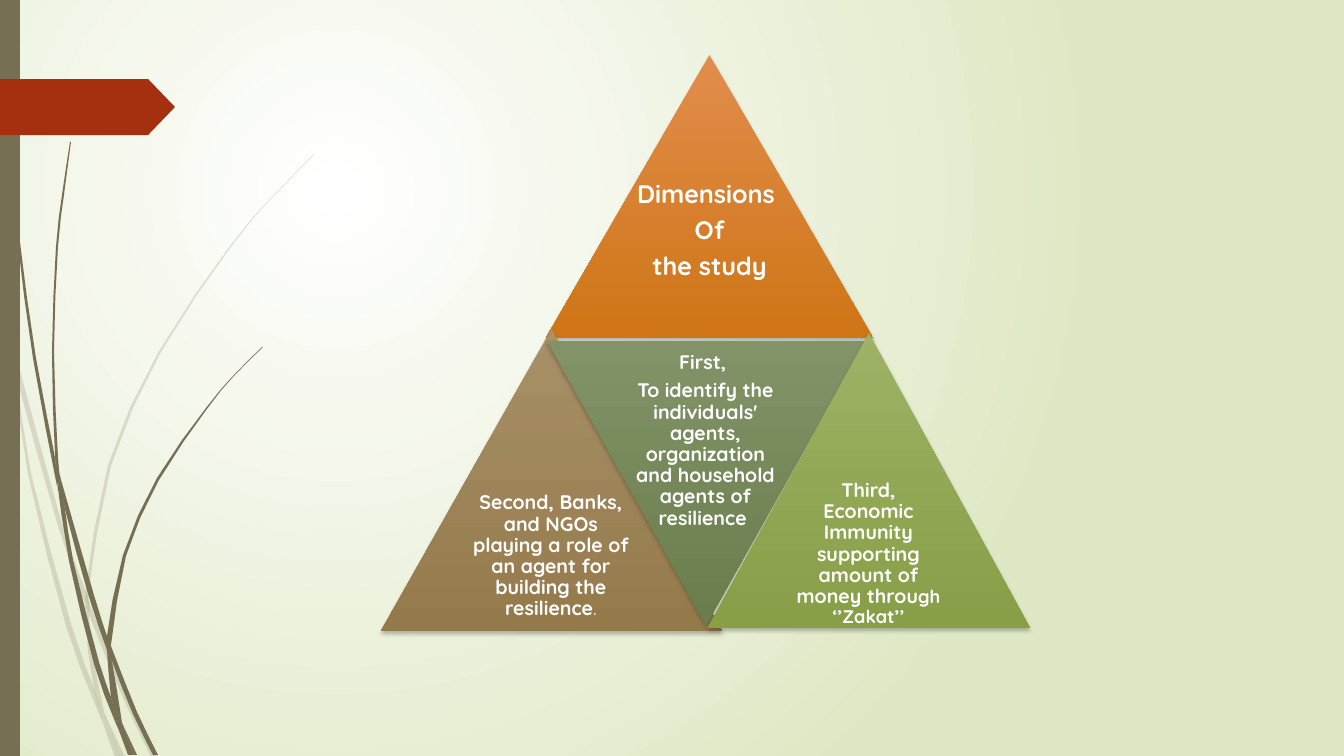
from dataclasses import dataclass
from typing import NamedTuple

from lxml import etree
from pptx import Presentation
from pptx.dml.color import RGBColor
from pptx.enum.shapes import MSO_SHAPE
from pptx.enum.text import MSO_ANCHOR, MSO_AUTO_SIZE, PP_ALIGN
from pptx.oxml.ns import qn
from pptx.util import Pt

PX = 914400 / 100.8
FONT = "Quicksand"
OLIVE = "766F54"
CURVE_STEPS = 2


class Box(NamedTuple):
    x: int
    y: int
    w: int
    h: int


class Run(NamedTuple):
    text: str
    size: int = 14
    bold: bool = True


class Blade(NamedTuple):
    """A piece of grass between two smooth edges, each listed from tip to root."""
    left: list[tuple[int, int]]
    right: list[tuple[int, int]]


@dataclass
class Panel:
    triangle: Box
    top_color: str
    bottom_color: str
    text_box: Box
    paragraphs: list[list[Run]]
    rotation: int = 0
    is_title: bool = False
    inset: int = 6
    space_after: float = 5


PALE_BLADES = [
    Blade([(0, 301), (10, 347), (11, 353)], [(0, 284), (9, 325), (11, 353)]),
    Blade([(14, 348), (17, 379), (58, 526), (85, 604)], [(14, 348), (62, 524), (86, 591)]),
    Blade([(89, 601), (89, 615), (124, 700), (151, 757)],
          [(89, 601), (93, 612), (128, 698), (156, 757)]),
    Blade([(106, 717), (120, 757)], [(106, 717), (125, 757)]),
    Blade([(11, 353), (28, 474), (66, 626), (93, 699), (102, 720)],
          [(11, 353), (17, 379), (31, 473), (71, 624), (94, 688), (100, 713), (102, 720)]),
    Blade([(85, 604), (88, 651), (94, 688), (97, 698), (106, 717)],
          [(85, 604), (89, 615), (92, 651), (104, 712), (106, 717)]),
    Blade([(314, 154), (270, 199), (230, 246), (159, 351), (108, 465), (86, 589), (89, 601)],
          [(314, 155), (270, 200), (231, 247), (161, 352), (111, 466), (89, 589), (89, 601)]),
    Blade([(102, 720), (115, 757)], [(102, 720), (120, 757)]),
    Blade([(86, 591), (85, 604), (89, 613)], [(86, 591), (89, 601), (89, 615)]),
    Blade([(94, 688), (100, 713), (102, 720), (120, 757)],
          [(94, 688), (97, 698), (106, 717), (120, 757)]),
]
DARK_BLADES = [
    Blade([(3, 0), (7, 111), (17, 235), (33, 358), (56, 481), (57, 485)],
          [(4, 0), (8, 110), (19, 234), (36, 358), (55, 457), (57, 485)]),
    Blade([(60, 476), (65, 509), (89, 597), (107, 650)], [(60, 476), (94, 595), (107, 636)]),
    Blade([(111, 646), (112, 661), (133, 714), (153, 755)],
          [(111, 646), (114, 654), (137, 712), (158, 755)]),
    Blade([(57, 481), (69, 561), (94, 664), (112, 714), (118, 728)],
          [(57, 481), (65, 509), (73, 560), (99, 662), (111, 697), (117, 723), (118, 728)]),
    Blade([(70, 142), (62, 195), (56, 247), (52, 352), (55, 453), (60, 476)],
          [(71, 142), (64, 195), (58, 247), (54, 352), (58, 457), (60, 476)]),
    Blade([(123, 725), (134, 755)], [(123, 725), (137, 755)]),
    Blade([(55, 453), (57, 481), (65, 509)], [(55, 453), (60, 476), (65, 509)]),
    Blade([(262, 347), (233, 376), (206, 408), (157, 478), (123, 555), (107, 636), (111, 646)],
          [(263, 347), (233, 377), (207, 409), (159, 480), (126, 556), (112, 638), (111, 646)]),
    Blade([(118, 728), (128, 755)], [(118, 728), (132, 755)]),
    Blade([(107, 650), (111, 697), (117, 712), (123, 725)],
          [(107, 650), (112, 661), (122, 722), (123, 725)]),
    Blade([(107, 636), (107, 650), (112, 661)], [(107, 636), (111, 646), (112, 661)]),
    Blade([(111, 697), (117, 723), (118, 728), (131, 755)],
          [(111, 697), (117, 712), (123, 725), (134, 755)]),
]
PANELS = [
    Panel(Box(546, 55, 327, 283), "E18D4C", "CF7516", Box(628, 177, 163, 108),
          [[Run("Dimensions ", 18)], [Run("Of", 18)], [Run("the study", 18)]],
          is_title=True, space_after=6.3),
    Panel(Box(381, 329, 341, 302), "A89068", "947A4B", Box(466, 481, 170, 151),
          [[Run("Second, Banks, and NGOs playing a role of an agent for "
                "building the resilience"), Run(".", bold=False)]]),
    Panel(Box(547, 341, 318, 284), "819367", "6A7D4D", Box(626, 353, 159, 176),
          [[Run("First, ")],
           [Run("To identify the individuals' agents, organization and household "
                "agents of resilience ")]], rotation=180),
    Panel(Box(708, 333, 322, 295), "9DB265", "889E47", Box(788, 480, 161, 148),
          [[Run("Third, Economic Immunity supporting amount of money throu"),
            Run("gh ‘’Zakat’’", 13)]], inset=7),
]


def px(n: float) -> int:
    return round(n * PX)


def rgb(color: str) -> RGBColor:
    return RGBColor.from_string(color)


def add_tag(parent, tag: str, **attrs):
    return etree.SubElement(parent, qn(tag), {k: str(v) for k, v in attrs.items()})


def fill_solid(sp, color: str, opacity: int = 100) -> None:
    sp.shadow.inherit = False
    sp.line.fill.background()
    sp.fill.solid()
    sp.fill.fore_color.rgb = rgb(color)
    if opacity < 100:
        clr = sp._element.spPr.find(".//" + qn("a:srgbClr"))
        add_tag(clr, "a:alpha", val=opacity * 1000)


def fill_gradient(fill, *colors: str) -> None:
    """Set a top-to-bottom gradient."""
    fill.gradient()
    fill.gradient_angle = 270
    for stop, color in zip(fill.gradient_stops, colors):
        stop.color.rgb = rgb(color)


def paint_background(s) -> None:
    fill_gradient(s.background.fill, "FFFFFF", "DFE8C4")
    lin = s._element.find(".//" + qn("p:bg")).find(".//" + qn("a:lin"))
    grad = lin.getparent()
    grad.remove(lin)
    path = add_tag(grad, "a:path", path="circle")
    add_tag(path, "a:fillToRect", l=50000, t=50000, r=100000, b=100000)


def add_preset(s, kind, box: Box):
    return s.shapes.add_shape(kind, *map(px, box))


def smooth(points: list[tuple[int, int]]) -> list[tuple[float, float]]:
    """Sample a Catmull-Rom curve through the points."""
    pts = [points[0], *points, points[-1]]
    curve = []
    for a, b, c, d in zip(pts, pts[1:], pts[2:], pts[3:]):
        for i in range(CURVE_STEPS):
            t = i / CURVE_STEPS
            curve.append(tuple(
                q + (r - p) * t / 2 + (2 * p - 5 * q + 4 * r - e) * t**2 / 2
                + (3 * q - p - 3 * r + e) * t**3 / 2
                for p, q, r, e in zip(a, b, c, d)))
    return curve + [points[-1]]


def add_blade(s, blade: Blade, opacity: int) -> None:
    outline = smooth(blade.left) + smooth(blade.right)[::-1]
    start, *rest = [(px(x), px(y)) for x, y in outline]
    builder = s.shapes.build_freeform(*start)
    builder.add_line_segments(rest)
    fill_solid(builder.convert_to_shape(), OLIVE, opacity)


def add_triangle(s, panel: Panel) -> None:
    sp = add_preset(s, MSO_SHAPE.ISOSCELES_TRIANGLE, panel.triangle)
    sp.rotation = panel.rotation
    fill_gradient(sp.fill, panel.top_color, panel.bottom_color)
    sp._element.spPr.find(qn("a:gradFill")).set("rotWithShape", "0")
    sp.line.fill.background()
    sp.shadow.inherit = False
    effects = sp._element.spPr.find(qn("a:effectLst"))
    shadow = add_tag(effects, "a:outerShdw", blurRad=Pt(3), dist=Pt(2),
                     dir=5400000, rotWithShape=0)
    add_tag(add_tag(shadow, "a:srgbClr", val="000000"), "a:alpha", val=25000)


def write_text(tf, paragraphs: list[list[Run]], *, inset: int, space_after: float,
               color: str = "FFFFFF") -> None:
    tf.word_wrap = True
    tf.auto_size = MSO_AUTO_SIZE.NONE
    tf.vertical_anchor = MSO_ANCHOR.MIDDLE
    tf.margin_left = tf.margin_right = tf.margin_top = tf.margin_bottom = px(inset)
    for i, runs in enumerate(paragraphs):
        p = tf.add_paragraph() if i else tf.paragraphs[0]
        p.alignment = PP_ALIGN.CENTER
        p.line_spacing = 0.9
        p.space_before, p.space_after = Pt(0), Pt(space_after)
        for run in runs:
            r = p.add_run()
            r.text = run.text
            r.font.name, r.font.size, r.font.bold = FONT, Pt(run.size), run.bold
            r.font.color.rgb = rgb(color)


def add_panel(s, panel: Panel) -> None:
    add_triangle(s, panel)
    box = [px(n) for n in panel.text_box]
    if panel.is_title:
        sp = s.shapes.title
        sp.left, sp.top, sp.width, sp.height = box
        s.shapes._spTree.append(sp._element)
    else:
        sp = s.shapes.add_textbox(*box)
    write_text(sp.text_frame, panel.paragraphs, inset=panel.inset,
               space_after=panel.space_after)


def main() -> None:
    prs = Presentation()
    prs.slide_width, prs.slide_height = px(1344), px(756)
    s = prs.slides.add_slide(prs.slide_layouts[5])
    paint_background(s)
    for blades, opacity in ((PALE_BLADES, 20), (DARK_BLADES, 100)):
        for blade in blades:
            add_blade(s, blade, opacity)
    fill_solid(add_preset(s, MSO_SHAPE.RECTANGLE, Box(0, 0, 20, 756)), OLIVE)
    tag = add_preset(s, MSO_SHAPE.PENTAGON, Box(0, 79, 175, 56))
    tag.adjustments[0] = 0.48
    fill_solid(tag, "A53010")
    for panel in PANELS:
        add_panel(s, panel)
    prs.save("out.pptx")


if __name__ == "__main__":
    main()
